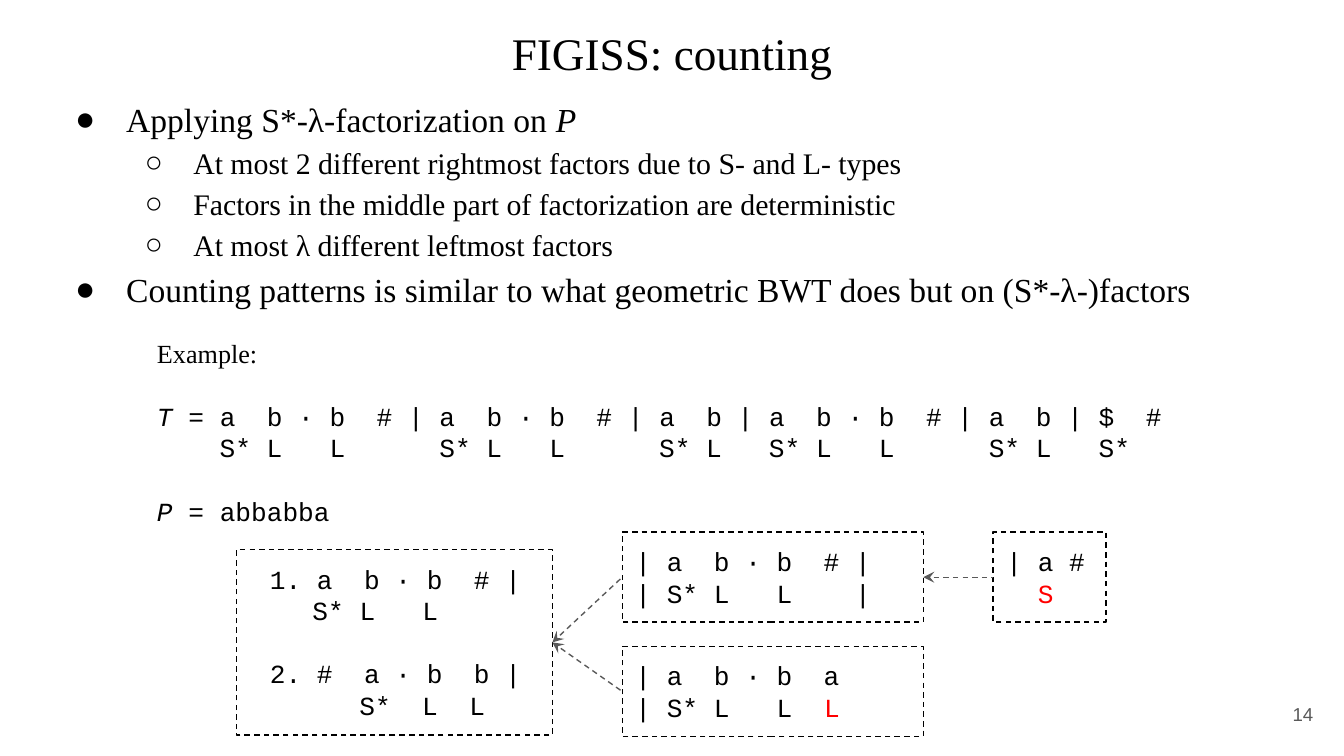
import pptx
import pptx.dml.color
import pptx.enum.dml
import pptx.enum.shapes
import pptx.enum.text
import pptx.oxml.ns
import pptx.util
from lxml import etree

Inches, Pt = pptx.util.Inches, pptx.util.Pt
ALIGN = pptx.enum.text.PP_ALIGN
ANCHOR = pptx.enum.text.MSO_ANCHOR
SERIF, MONO, SANS = "Times New Roman", "Courier New", "Arial"
BLACK, GREY, RED = "000000", "595959", "FF0000"
WIDTH = 10                   # inches, 16:9 slide
CODE_SIZE = 14
CHAR = 0.6 * CODE_SIZE / 72  # width of one monospaced character, inches
BLANK_LINE = 17              # points

# Content: a paragraph is (runs, format); a run is (text, format)
TITLE = "FIGISS: counting"
PAGE = "14"
BULLETS = [
    (0, [("Applying S*-λ-factorization on ", {}), ("P", {"italic": True})]),
    (1, [("At most 2 different rightmost factors due to S- and L- types", {})]),
    (1, [("Factors in the middle part of factorization are deterministic", {})]),
    (1, [("At most λ different leftmost factors", {})]),
    (0, [("Counting patterns is similar to what geometric BWT does but on (S*-λ-)factors", {})]),
]
LEVELS = [
    {"size": 18, "left": 0.5, "hang": 0.38, "bullet": "●"},
    {"size": 16, "left": 1, "hang": 0.36, "bullet": "○"},
]
EXAMPLE = [
    ([("Example:", {"font": SERIF})], {}),
    ([("T", {"italic": True}),
      (" = a  b · b  # | a  b · b  # | a  b | a  b · b  # | a  b | $  #", {})],
     {"before": BLANK_LINE}),
    ([("S* L   L      S* L   L      S* L   S* L   L      S* L   S*", {})],
     {"left": 4 * CHAR}),
    ([("P", {"italic": True}), (" = abbabba", {})], {"before": BLANK_LINE}),
]
NUMBERED = {"left": 0.5, "hang": 0.35}
BOXES = {
    "leftmost": ((1.76, 4.09, 2.35, 1.38), [
        ([("a  b · b  # |", {})], {"number": 1, **NUMBERED}),
        ([("S* L   L", {})], {"left": 4 * CHAR}),
        ([("#  a · b  b |", {})], {"number": 2, "before": BLANK_LINE, **NUMBERED}),
        ([("S*  L  L", {})], {"left": 7 * CHAR}),
    ]),
    "middle": ((4.63, 3.96, 2.24, 0.67), [
        ([("| a  b · b  # |", {})], {}),
        ([("| S* L   L    |", {})], {}),
    ]),
    "ending in L": ((4.63, 4.81, 2.24, 0.67), [
        ([("| a  b · b  a", {})], {}),
        ([("| S* L   L  ", {}), ("L", {"color": RED})], {}),
    ]),
    "ending in S": ((7.39, 3.96, 0.84, 0.67), [
        ([("| a #", {})], {}),
        ([("S", {"color": RED})], {"left": 2 * CHAR}),
    ]),
}
ARROWS = [("middle", "leftmost"), ("ending in L", "leftmost"), ("ending in S", "middle")]


def rgb(color):
    return pptx.dml.color.RGBColor.from_string(color)


def add_xml(parent, tag, **attrs):
    return etree.SubElement(parent, pptx.oxml.ns.qn(tag), **attrs)


def set_marker(p, font, left=0, hang=0, bullet=None, number=None):
    """Indent a paragraph and give it a bullet or a number."""
    pPr = p._p.get_or_add_pPr()
    pPr.set("marL", str(Inches(left)))
    pPr.set("indent", str(-Inches(hang)))
    if bullet or number:
        add_xml(add_xml(pPr, "a:buClr"), "a:srgbClr", val=BLACK)
        add_xml(pPr, "a:buFont", typeface=font)
    if bullet:
        add_xml(pPr, "a:buChar", char=bullet)
    elif number:
        add_xml(pPr, "a:buAutoNum", type="arabicPeriod", startAt=str(number))


def fill_text(sp, paragraphs, font=MONO, size=CODE_SIZE, color=BLACK,
              align=ALIGN.LEFT, anchor=ANCHOR.TOP, spacing=None):
    tf = sp.text_frame
    tf.word_wrap = True
    tf.vertical_anchor = anchor
    tf.margin_left = tf.margin_right = tf.margin_top = tf.margin_bottom = Inches(0.1)
    for i, (runs, style) in enumerate(paragraphs):
        style = dict(style)
        p = tf.paragraphs[0] if i == 0 else tf.add_paragraph()
        p.alignment = align
        p.line_spacing = spacing
        p.space_before = Pt(style.pop("before", 0))
        p_size = style.pop("size", size)
        p.level = style.pop("level", 0)
        set_marker(p, font, **style)
        for text, look in runs:
            r = p.add_run()
            r.text = text
            r.font.name = look.get("font", font)
            r.font.size = Pt(p_size)
            r.font.italic = look.get("italic", False)
            r.font.color.rgb = rgb(look.get("color", color))


def add_text(slide, at, paragraphs, **style):
    fill_text(slide.shapes.add_textbox(*map(Inches, at)), paragraphs, **style)


def dash(line, color):
    line.color.rgb = rgb(color)
    line.width = Pt(0.75)
    line.dash_style = pptx.enum.dml.MSO_LINE.DASH


def add_box(slide, at, paragraphs):
    sp = slide.shapes.add_shape(pptx.enum.shapes.MSO_SHAPE.RECTANGLE, *map(Inches, at))
    sp.shadow.inherit = False
    sp.fill.background()
    dash(sp.line, BLACK)
    fill_text(sp, paragraphs)


def add_arrow(slide, source, target):
    """Point from the left side of source to the right side of target."""
    x, y, _, h = BOXES[source][0]
    tx, ty, tw, th = BOXES[target][0]
    ends = (tx + tw, ty + th / 2, x, y + h / 2)
    line = slide.shapes.add_connector(
        pptx.enum.shapes.MSO_CONNECTOR.STRAIGHT, *map(Inches, ends))
    dash(line.line, GREY)
    spPr = line._element.spPr
    add_xml(spPr.find(pptx.oxml.ns.qn("a:ln")), "a:headEnd", type="stealth")
    add_xml(spPr, "a:effectLst")


def main():
    prs = pptx.Presentation()
    prs.slide_width, prs.slide_height = Inches(WIDTH), Inches(WIDTH * 9 / 16)
    s = prs.slides.add_slide(prs.slide_layouts[6])

    # Title and bullets
    add_text(s, (0.34, 0.09, 9.32, 0.63), [([(TITLE, {})], {})],
             font=SERIF, size=24.2, align=ALIGN.CENTER)
    add_text(s, (0.34, 0.59, 9.32, 1.83),
             [(runs, {"level": level, **LEVELS[level]}) for level, runs in BULLETS],
             font=SERIF, spacing=1.15)

    # Example text and its factor boxes
    add_text(s, (1.07, 2.41, 7.87, 1.62), EXAMPLE)
    for at, paragraphs in BOXES.values():
        add_box(s, at, paragraphs)
    for source, target in ARROWS:
        add_arrow(s, source, target)

    # Page number
    add_text(s, (9.27, 5.1, 0.6, 0.43), [([(PAGE, {})], {})], font=SANS, size=10,
             color=GREY, align=ALIGN.RIGHT, anchor=ANCHOR.MIDDLE)
    prs.save("out.pptx")


if __name__ == "__main__":
    main()
